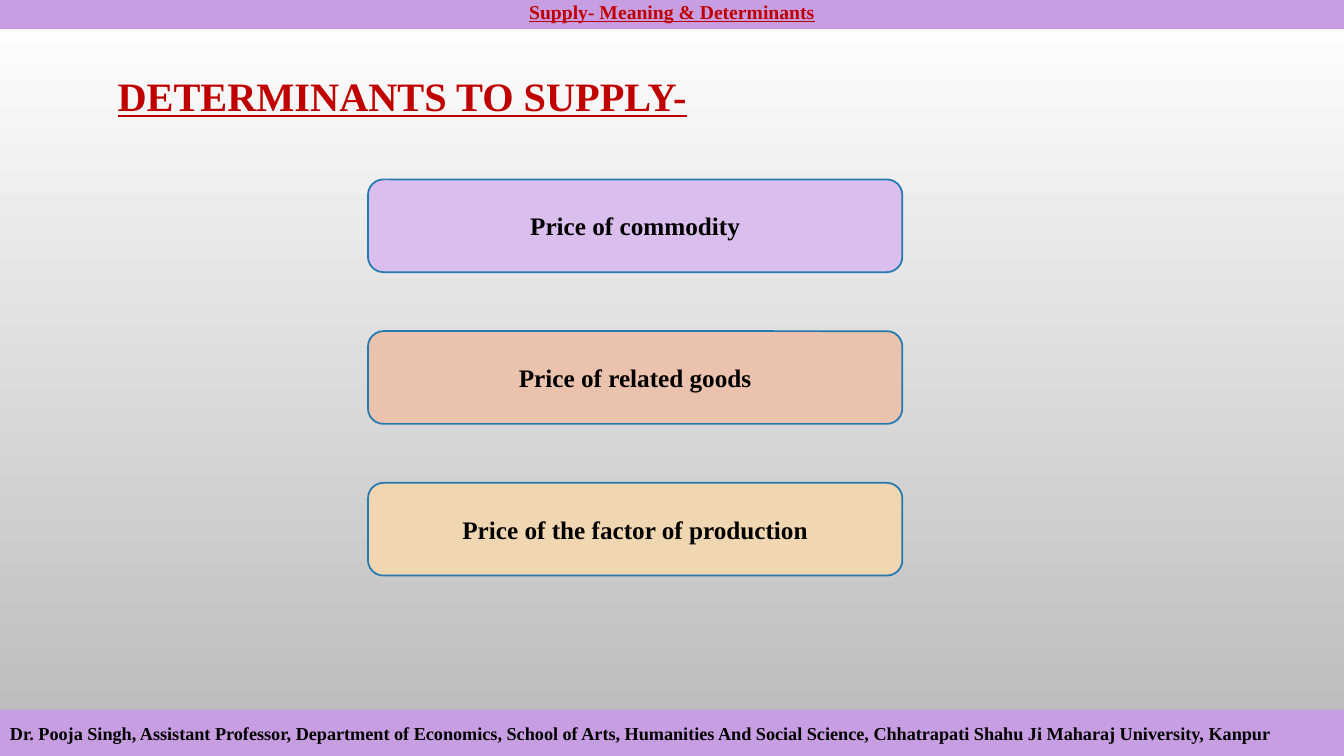
"""Build the slide on the determinants of supply."""
from pptx import Presentation
from pptx import util as u
from pptx.dml.color import RGBColor
from pptx.enum import shapes, text

THEME = {
    "font": "Times New Roman",
    "red": RGBColor(0xC0, 0x00, 0x00),
    "black": RGBColor(0x00, 0x00, 0x00),
    "bar": RGBColor(0xC8, 0x9E, 0xE3),
    "outline": RGBColor(0x23, 0x79, 0xB0),
    "cards": [RGBColor(0xDA, 0xBE, 0xED), RGBColor(0xEB, 0xC2, 0xAD), RGBColor(0xF0, 0xD7, 0xB2)],
    "background": [RGBColor(0xFF, 0xFF, 0xFF), RGBColor(0xB9, 0xB9, 0xB9)],
    "title_size": 28.8, "card_size": 18, "header_size": 14, "footer_size": 13,
}
MIDDLE, TOP = text.MSO_ANCHOR.MIDDLE, text.MSO_ANCHOR.TOP
CENTER, LEFT = text.PP_ALIGN.CENTER, text.PP_ALIGN.LEFT


def write(sp, words, size, color, align=CENTER, anchor=MIDDLE, underline=False):
    """Put one bold formatted line into a shape."""
    tf = sp.text_frame
    tf.word_wrap = True
    tf.vertical_anchor = anchor
    p = tf.paragraphs[0]
    p.alignment = align
    r = p.add_run()
    r.text = words
    fmt = {"name": THEME["font"], "size": u.Pt(size), "bold": True, "underline": underline}
    for key, value in fmt.items():
        setattr(r.font, key, value)
    r.font.color.rgb = color
    return p


def add_box(s, kind, box, fill):
    """Add a flat filled shape without an outline."""
    sp = s.shapes.add_shape(kind, *map(u.Inches, box))
    sp.shadow.inherit = False
    sp.fill.solid()
    sp.fill.fore_color.rgb = fill
    sp.line.fill.background()
    return sp


prs = Presentation()
prs.slide_width, prs.slide_height = u.Inches(13.33), u.Inches(7.5)
s = prs.slides.add_slide(prs.slide_layouts[5])

background = s.background.fill
background.gradient()
background.gradient_angle = 270
for stop, position, color in zip(background.gradient_stops, (0, 1), THEME["background"]):
    stop.position = position
    stop.color.rgb = color

title = s.shapes.title
title_box = {"left": 0.97, "top": 0.61, "width": 6.04, "height": 0.74}
for key, value in title_box.items():
    setattr(title, key, u.Inches(value))
p = write(title, "DETERMINANTS TO SUPPLY-", THEME["title_size"], THEME["red"], underline=True)
p.line_spacing = 0.9

determinants = ["Price of commodity", "Price of related goods", "Price of the factor of production"]
for i, (words, fill) in enumerate(zip(determinants, THEME["cards"])):
    card = add_box(s, shapes.MSO_SHAPE.ROUNDED_RECTANGLE, (3.65, 1.78 + 1.505 * i, 5.3, 0.92), fill)
    card.line.color.rgb = THEME["outline"]
    card.line.width = u.Pt(1.25)
    write(card, words, THEME["card_size"], THEME["black"])

footer = add_box(s, shapes.MSO_SHAPE.RECTANGLE, (0, 7.04, 13.33, 0.46), THEME["bar"])
write(footer, "Dr. Pooja Singh, Assistant Professor, Department of Economics, School of Arts, "
      "Humanities And Social Science, Chhatrapati Shahu Ji Maharaj University, Kanpur",
      THEME["footer_size"], THEME["black"], align=LEFT)

header = add_box(s, shapes.MSO_SHAPE.RECTANGLE, (0, -0.05, 13.33, 0.34), THEME["bar"])
write(header, "Supply- Meaning & Determinants", THEME["header_size"], THEME["red"],
      anchor=TOP, underline=True)
header.text_frame.auto_size = text.MSO_AUTO_SIZE.SHAPE_TO_FIT_TEXT

prs.save("out.pptx")
